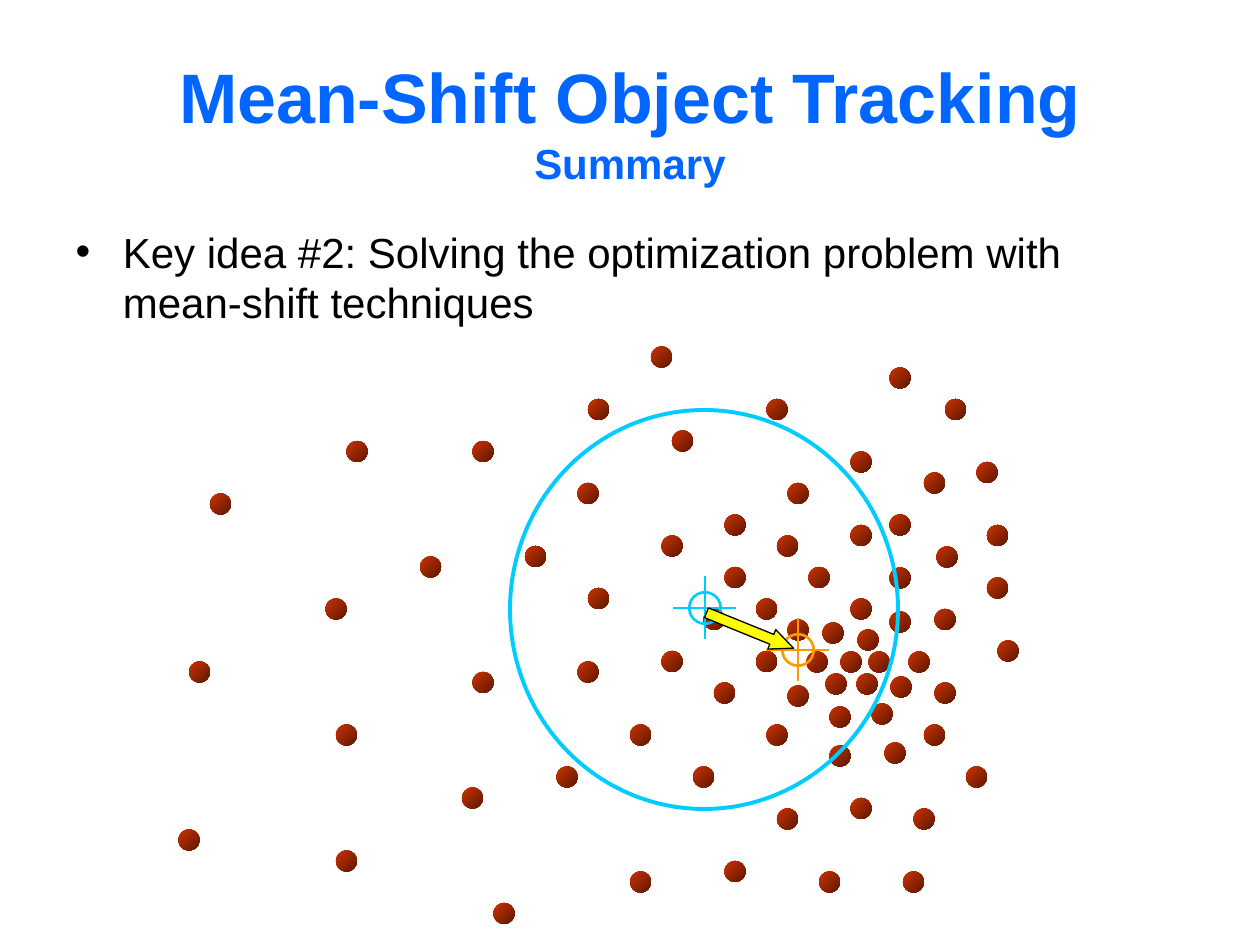
from lxml.etree import SubElement
from pptx import Presentation
from pptx.dml.color import RGBColor
from pptx.enum.shapes import MSO_CONNECTOR, MSO_SHAPE
from pptx.enum.text import MSO_AUTO_SIZE
from pptx.oxml.ns import qn
from pptx.util import Pt

PX = 914400 // 126
BLUE = RGBColor(0x00, 0x66, 0xFF)
BLACK = RGBColor(0x00, 0x00, 0x00)
RUST = RGBColor(0xCC, 0x33, 0x00)
BROWN = RGBColor(0x5E, 0x18, 0x00)
CYAN = RGBColor(0x00, 0xCC, 0xFF)
ORANGE = RGBColor(0xFF, 0x99, 0x00)
YELLOW = RGBColor(0xFF, 0xFF, 0x00)

TITLE = "Mean-Shift Object Tracking\vSummary"
IDEA = "Key idea #2: Solving the optimization problem with mean-shift techniques"

DOT = 21
STEP = DOT / 2
GRID_ROWS = {
    34: [63], 39: [57, 74, 91], 42: [65], 43: [34, 46], 44: [82],
    45: [94], 46: [89], 47: [56, 76], 48: [21], 50: [70],
    51: [82, 95], 52: [64, 75], 53: [51], 54: [41], 55: [70, 78],
    56: [95], 57: [57], 58: [32, 73, 82], 59: [68, 90], 60: [76],
    62: [96], 63: [64, 73], 64: [19, 56], 65: [46], 66: [69, 90],
    70: [33, 61, 74, 89], 74: [54, 67, 93], 76: [45], 77: [82],
    78: [75, 88], 80: [18], 82: [33], 83: [70], 84: [61, 79, 87], 87: [48],
}
EDGE_X, EDGE_YS = 900, [378, 525, 578, 622]
CORE_ROWS = {
    557: [947], 633: [833], 640: [868], 662: [817, 851, 879, 919],
    684: [836, 867], 687: [901], 696: [798], 714: [882], 717: [840],
    753: [895], 756: [840],
}

WINDOW = (510, 410, 388, 399)
START, MEAN = (705, 608), (798, 650)
EYE = ARM = 3 * STEP
ARROW = (703, 620, 94, 21)


def scale(*nums):
    return [round(n * PX) for n in nums]


def around(x, y, size):
    return x - size / 2, y - size / 2, size, size


def write(holder, box, text, sizes, color, bold):
    holder.left, holder.top, holder.width, holder.height = scale(*box)
    frame = holder.text_frame
    frame.text = text
    frame.auto_size = MSO_AUTO_SIZE.NONE
    for run, size in zip(frame.paragraphs[0].runs, sizes):
        run.font.name = "Arial"
        run.font.size = Pt(size)
        run.font.bold = bold
        run.font.color.rgb = color


def shape(home, kind, box):
    item = home.add_shape(kind, *scale(*box))
    item.shadow.inherit = False
    item.fill.background()
    item.line.fill.background()
    return item


def stroke(item, color, width):
    item.line.color.rgb = color
    item.line.width = Pt(width)


def ring(home, box, color, width):
    stroke(shape(home, MSO_SHAPE.OVAL, box), color, width)


def dot(home, x, y):
    fill = shape(home, MSO_SHAPE.OVAL, around(x, y, DOT)).fill
    fill.gradient()
    fill.gradient_angle = 315
    for stop, color, place in zip(fill.gradient_stops, (RUST, BROWN), (0, 1)):
        stop.color.rgb = color
        stop.position = place


def target(home, x, y, color):
    ring(home, around(x, y, EYE), color, 1.5)
    for dx, dy in ((0, ARM), (ARM, 0)):
        ends = scale(x - dx, y - dy, x + dx, y + dy)
        hair = home.add_connector(MSO_CONNECTOR.STRAIGHT, *ends)
        stroke(hair, color, 0.75)
        SubElement(hair._element.spPr, qn("a:effectLst"))


def scatter(home):
    for row, cols in GRID_ROWS.items():
        for col in cols:
            dot(home, col * STEP, row * STEP)
    for y in EDGE_YS:
        dot(home, EDGE_X, y)
    for y, xs in CORE_ROWS.items():
        for x in xs:
            dot(home, x, y)


def shift(home):
    arrow = shape(home, MSO_SHAPE.RIGHT_ARROW, ARROW)
    stroke(arrow, BLACK, 0.75)
    arrow.fill.solid()
    arrow.fill.fore_color.rgb = YELLOW
    arrow.adjustments[0] = 0.5
    arrow.adjustments[1] = 1.12
    arrow.rotation = 22.1


def main():
    deck = Presentation()
    deck.slide_width, deck.slide_height = scale(1260, 945)
    slide = deck.slides.add_slide(deck.slide_layouts[1])
    shapes = slide.shapes

    title, body = slide.placeholders
    write(title, (63, 42, 1134, 157), TITLE, (40, 24), BLUE, True)
    write(body, (63, 220, 1134, 624), IDEA, (24,), BLACK, False)

    scatter(shapes)
    search = shapes.add_group_shape().shapes
    ring(search, WINDOW, CYAN, 2.25)
    target(search, *START, CYAN)
    target(shapes.add_group_shape().shapes, *MEAN, ORANGE)
    shift(shapes)

    deck.save("out.pptx")


if __name__ == "__main__":
    main()
